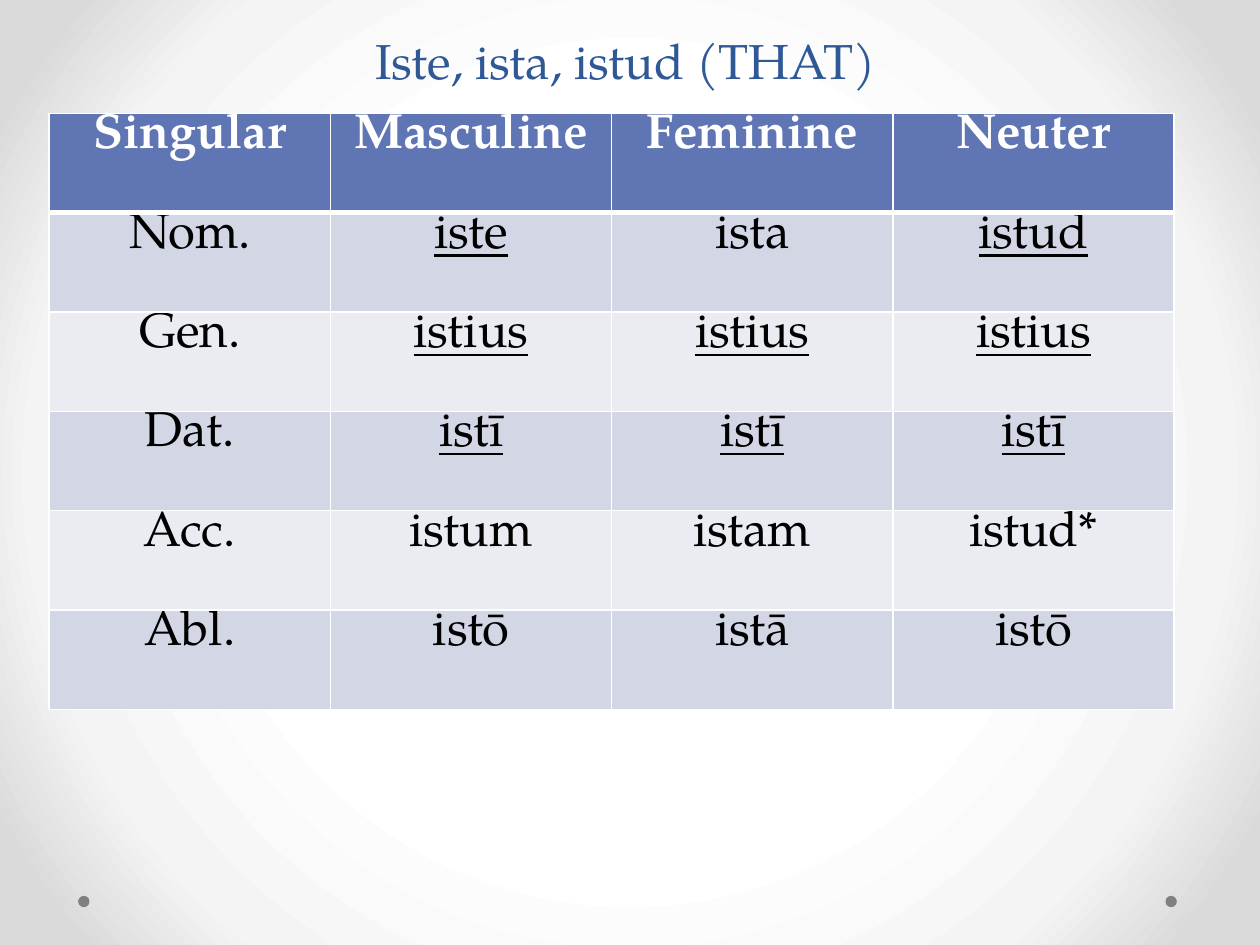
from pptx import Presentation
from pptx.dml.color import RGBColor as RGB
from pptx.enum.shapes import MSO_SHAPE as Shape
from pptx.enum.text import MSO_ANCHOR as Anchor, PP_ALIGN as Align
from pptx.oxml import parse_xml
from pptx.oxml.ns import nsdecls
from pptx.util import Inches, Pt

FONT = "TeX Gyre Pagella"
NAVY = RGB(0x2F, 0x58, 0x97)
BLUE = RGB(0x60, 0x76, 0xB4)
BANDS = RGB(0xEA, 0xEC, 0xF2), RGB(0xD2, 0xD6, 0xE5)
WHITE = RGB(0xFF, 0xFF, 0xFF)
BLACK = RGB(0, 0, 0)
GRAY = RGB(0x80, 0x80, 0x80)
STOPS = (50, WHITE), (76, RGB(0xF4, 0xF4, 0xF4)), (92, RGB(0xDA, 0xDA, 0xDA))

FORMS = [
    ("Singular", "Masculine", "Feminine", "Neuter"),
    ("Nom.", "iste", "ista", "istud"),
    ("Gen.", "istius", "istius", "istius"),
    ("Dat.", "istī", "istī", "istī"),
    ("Acc.", "istum", "istam", "istud*"),
    ("Abl.", "istō", "istā", "istō"),
]
MARKED = {"iste", "istud", "istius", "istī"}


def write(frame, text, size=28, color=BLACK, bold=False, line=False):
    """Put one centred, formatted line of text in a frame."""
    para = frame.paragraphs[0]
    para.alignment = Align.CENTER
    run = para.add_run()
    run.text = text
    font = run.font
    font.name, font.size, font.bold, font.underline = FONT, Pt(size), bold, line
    font.color.rgb = color


def paint(slide):
    """Give the slide its round gradient background."""
    stops = "".join(
        f'<a:gs pos="{pos * 1000}"><a:srgbClr val="{color}"/></a:gs>'
        for pos, color in STOPS
    )
    slide.element.cSld.insert(0, parse_xml(
        f'<p:bg {nsdecls("p", "a")}><p:bgPr><a:gradFill rotWithShape="1">'
        f'<a:gsLst>{stops}</a:gsLst><a:path path="circle">'
        '<a:fillToRect l="50000" t="50000" r="50000" b="50000"/></a:path>'
        '</a:gradFill><a:effectLst/></p:bgPr></p:bg>'
    ))


def add_dot(slide, left):
    """Add a small gray dot near the foot of the slide."""
    dot = slide.shapes.add_shape(
        Shape.OVAL, Inches(left), Inches(7.11), Inches(0.09), Inches(0.09)
    )
    dot.shadow.inherit = False
    dot.fill.solid()
    dot.fill.fore_color.rgb = GRAY
    dot.line.fill.background()


def add_title(slide, text):
    """Place and fill the title."""
    title = slide.shapes.title
    title.left, title.top = Inches(1.84), Inches(-0.22)
    title.width, title.height = Inches(6.25), Inches(0.98)
    title.text_frame.vertical_anchor = Anchor.BOTTOM
    write(title.text_frame, text, color=NAVY)


def edge(cell, base):
    """Draw white borders, with the base at its own width."""
    props = cell._tc.get_or_add_tcPr()
    for spot, (side, width) in enumerate(
        [("L", 1), ("R", 1), ("T", 1), ("B", base)]
    ):
        props.insert(spot, parse_xml(
            f'<a:ln{side} {nsdecls("a")} w="{Pt(width)}"><a:solidFill>'
            f'<a:srgbClr val="{WHITE}"/></a:solidFill></a:ln{side}>'
        ))


def add_forms(slide):
    """Add the table of forms."""
    table = slide.shapes.add_table(
        len(FORMS), len(FORMS[0]),
        Inches(0.39), Inches(0.9), Inches(8.93), Inches(4.73),
    ).table
    for row, words in enumerate(FORMS):
        head = row == 0
        for col, word in enumerate(words):
            cell = table.cell(row, col)
            cell.margin_top = cell.margin_bottom = 0
            cell.fill.solid()
            cell.fill.fore_color.rgb = BLUE if head else BANDS[row % 2]
            edge(cell, 3 if head else 1)
            write(cell.text_frame, word, color=WHITE if head else BLACK,
                  bold=head, line=word in MARKED)


def main():
    """Build and save the slide."""
    deck = Presentation()
    deck.slide_width, deck.slide_height = Inches(10), Inches(7.5)
    slide = deck.slides.add_slide(deck.slide_layouts[5])
    paint(slide)
    for left in (9.25, 0.62):
        add_dot(slide, left)
    add_title(slide, "Iste, ista, istud (THAT)")
    add_forms(slide)
    deck.save("out.pptx")


if __name__ == "__main__":
    main()
